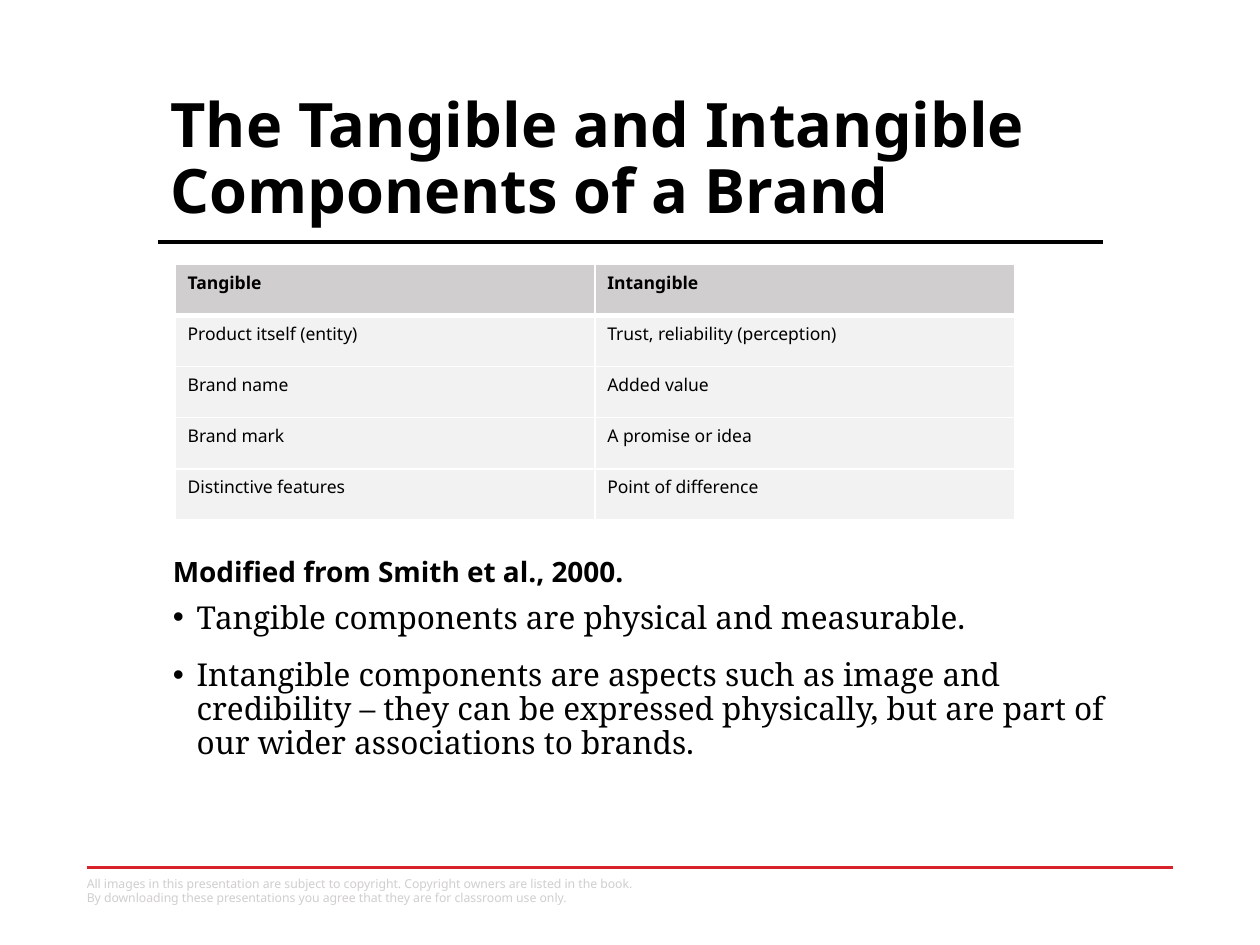
from lxml.etree import SubElement
from pptx import Presentation
from pptx.dml.color import RGBColor
from pptx.enum.shapes import MSO_CONNECTOR
from pptx.enum.text import MSO_ANCHOR, MSO_AUTO_SIZE, PP_ALIGN
from pptx.oxml.ns import qn
from pptx.util import Cm, Pt

BLACK = RGBColor(0x00, 0x00, 0x00)
RED = RGBColor(0xD7, 0x22, 0x2A)
GREY = RGBColor(0xD0, 0xCE, 0xCE)
PALE = RGBColor(0xF2, 0xF2, 0xF2)
SANS, SERIF = "Noto Sans", "Noto Serif"


def add_run(p, text, size, font=SANS, color=BLACK, bold=False):
    r = p.add_run()
    r.text = text
    r.font.size = Pt(size)
    r.font.name = font
    r.font.bold = bold
    r.font.color.rgb = color


def add_border(cell, side, width):
    ln = SubElement(cell._tc.get_or_add_tcPr(), qn(f"a:ln{side}"), w=str(Pt(width)))
    fill = SubElement(ln, qn("a:solidFill"))
    SubElement(fill, qn("a:srgbClr"), val="FFFFFF")


prs = Presentation()
prs.slide_width, prs.slide_height = Cm(25.4), Cm(19.05)
s = prs.slides.add_slide(prs.slide_layouts[1])

title, body = s.placeholders
title.left, title.top, title.width, title.height = Cm(3.18), Cm(1.02), Cm(19.02), Cm(3.68)
body.left, body.top, body.width, body.height = Cm(3.23), Cm(11.13), Cm(20.45), Cm(7.32)

tf = title.text_frame
tf.auto_size = MSO_AUTO_SIZE.NONE
tf.vertical_anchor = MSO_ANCHOR.BOTTOM
p = tf.paragraphs[0]
p.alignment = PP_ALIGN.LEFT
p.line_spacing = 0.9
add_run(p, "The Tangible and Intangible Components of a Brand", 35, bold=True)

tf = body.text_frame
tf.auto_size = MSO_AUTO_SIZE.NONE
p = tf.paragraphs[0]
pPr = p._p.get_or_add_pPr()
pPr.set("marL", "0")
pPr.set("indent", "0")
SubElement(pPr, qn("a:buNone"))
p.line_spacing = 0.9
p.space_before = Pt(0)
add_run(p, "Modified from Smith et al., 2000.", 16, bold=True)

bullets = [
    ("Tangible components are physical and measurable.", 7.5),
    ("Intangible components are aspects such as image and credibility – they can be "
     "expressed physically, but are part of our wider associations to brands.", 13.5),
]
for text, before in bullets:
    p = tf.add_paragraph()
    pPr = p._p.get_or_add_pPr()
    pPr.set("marL", str(Cm(0.48)))
    pPr.set("indent", str(-Cm(0.48)))
    SubElement(pPr, qn("a:buFont"), typeface="Arial")
    SubElement(pPr, qn("a:buChar"), char="•")
    p.line_spacing = 0.9
    p.space_before = Pt(before)
    add_run(p, text, 18, SERIF)

rules = [(1.75, 23.65, 17.48, RED, 1.75), (3.18, 22.23, 4.88, BLACK, 2)]
for left, right, y, color, width in rules:
    sp = s.shapes.add_connector(MSO_CONNECTOR.STRAIGHT, Cm(left), Cm(y), Cm(right), Cm(y))
    sp.line.color.rgb = color
    sp.line.width = Pt(width)
    SubElement(sp._element.spPr, qn("a:effectLst"))

rows = [
    ("Tangible", "Intangible"),
    ("Product itself (entity)", "Trust, reliability (perception)"),
    ("Brand name", "Added value"),
    ("Brand mark", "A promise or idea"),
    ("Distinctive features", "Point of difference"),
]
table = s.shapes.add_table(len(rows), 2, Cm(3.53), Cm(5.33), Cm(16.92), Cm(5.15)).table
for i, row in enumerate(rows):
    for j, text in enumerate(row):
        cell = table.cell(i, j)
        for side in "LRTB":
            thick = (i, side) in ((0, "B"), (1, "T"))
            add_border(cell, side, 3 if thick else 1)
        cell.fill.solid()
        cell.fill.fore_color.rgb = PALE if i else GREY
        add_run(cell.text_frame.paragraphs[0], text, 10, bold=i == 0)

tf = s.shapes.add_textbox(Cm(1.5), Cm(17.53), Cm(12.7), Cm(0.86)).text_frame
tf.word_wrap = True
tf.auto_size = MSO_AUTO_SIZE.SHAPE_TO_FIT_TEXT
p = tf.paragraphs[0]
add_run(p, "All images in this presentation are subject to copyright. "
        "Copyright owners are listed in the book. ", 7, color=GREY)
p.add_line_break()
add_run(p, "By downloading these presentations you agree that they are "
        "for classroom use only.", 7, color=GREY)

prs.save("out.pptx")
